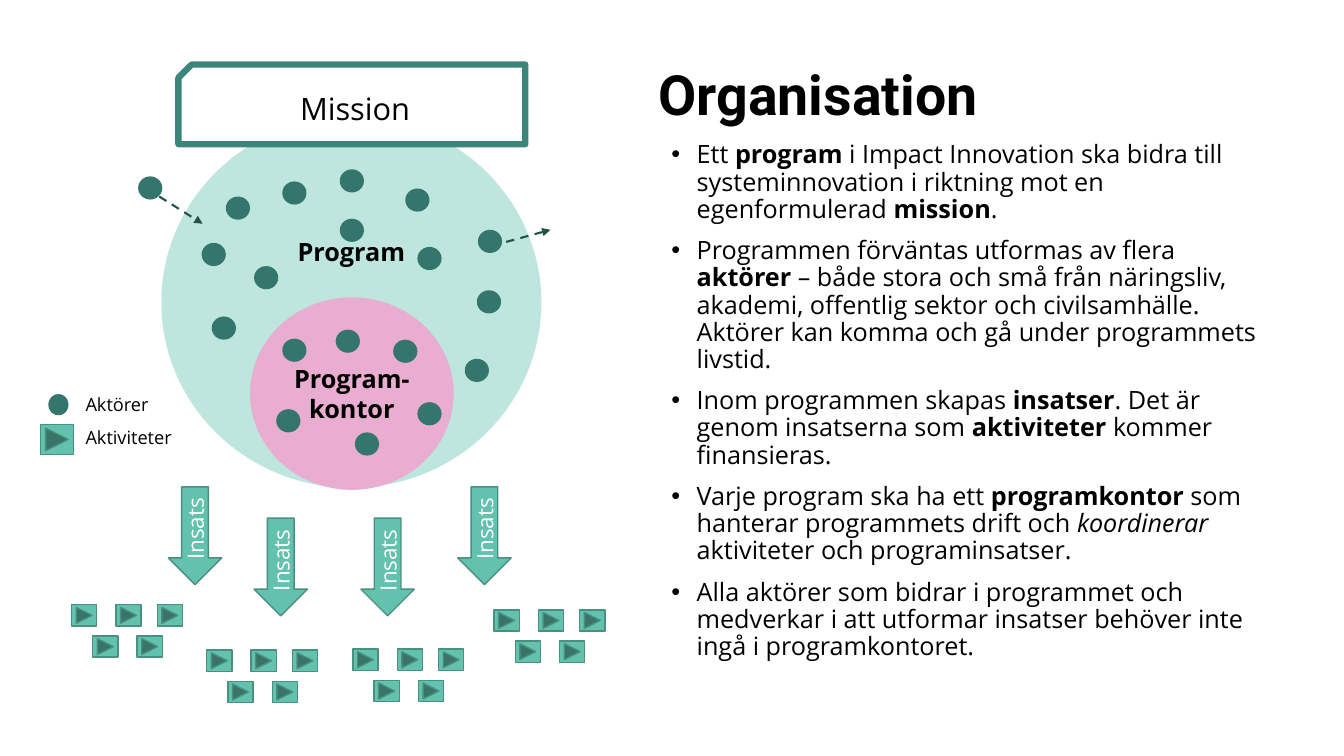
from lxml import etree
from pptx import Presentation
from pptx import util as u
from pptx.dml.color import RGBColor
from pptx.enum import dml, shapes, text
from pptx.oxml.ns import qn

TITLE = "Organisation"
# Each bullet is a list of (words, style) runs: "b" is bold, "i" is italic.
BULLETS = [
    [("Ett ", ""), ("program", "b"),
     (" i Impact Innovation ska bidra till systeminnovation i riktning mot en egenformulerad ", ""),
     ("mission", "b"), (".", "")],
    [("Programmen förväntas utformas av flera ", ""), ("aktörer", "b"),
     (" – både stora och små från näringsliv, akademi, offentlig sektor och civilsamhälle. "
      "Aktörer kan komma och gå under programmets livstid.", "")],
    [("Inom programmen skapas ", ""), ("insatser", "b"), (". Det är genom insatserna som ", ""),
     ("aktiviteter", "b"), (" kommer finansieras.", "")],
    [("Varje program ska ha ett ", ""), ("programkontor", "b"),
     (" som hanterar programmets drift och ", ""), ("koordinerar", "i"),
     (" aktiviteter och programinsatser.", "")],
    [("Alla aktörer som bidrar i programmet och medverkar i att utformar insatser "
      "behöver inte ingå i programkontoret.", "")],
]

BLACK = RGBColor(0x00, 0x00, 0x00)
WHITE = RGBColor(0xFF, 0xFF, 0xFF)
MINT = RGBColor(0xBE, 0xE6, 0xDE)
PINK = RGBColor(0xE8, 0xAD, 0xD0)
FRAME = RGBColor(0x3B, 0x85, 0x7A)
ACTOR = RGBColor(0x34, 0x75, 0x6C)
GREEN = RGBColor(0x62, 0xC2, 0xAE)
GREEN_EDGE = RGBColor(0x49, 0x90, 0x81)
ARROW = RGBColor(0x21, 0x54, 0x49)
BODY_FONT, TITLE_FONT = "Open Sans", "Roboto"

# Inches: left, top, width, height
TITLE_BOX = (6.43, 0.64, 6.42, 0.67)
BULLET_BOX = (6.56, 1.36, 6.19, 6.14)
PROGRAM = (1.6, 1.16, 3.77, 3.68)
OFFICE = (2.48, 2.95, 2.02, 1.91)
MISSION = (1.77, 0.64, 3.44, 0.79)
LEGEND_ACTOR = (0.48, 3.91, 0.2, 0.21)
LEGEND_ACTIVITY = (0.4, 4.21, 0.33, 0.3)
LEGEND_TEXTS = [("Aktörer", (0.75, 3.85, 0.83, 0.32)), ("Aktiviteter", (0.75, 4.18, 1.07, 0.32))]

ACTOR_SIZE = (0.24, 0.23)
ACTORS = [
    (2.24, 1.95), (2.8, 1.8), (3.37, 1.68), (3.52, 4.29), (2.1, 3.14), (3.37, 2.17),
    (4.02, 1.87), (4.14, 2.45), (4.74, 2.28), (4.73, 2.88), (3.9, 3.37), (4.61, 3.56),
    (2.8, 3.36), (3.33, 3.27), (4.14, 3.99), (2.74, 4.06), (2.52, 2.64), (2, 2.41),
    (1.37, 1.75),
]
MOVES = [((1.58, 1.95), (2.01, 2.22)), ((5.02, 2.4), (5.46, 2.28))]

EFFORT_SIZE = (0.53, 0.97)
EFFORTS = [(1.67, 4.83), (4.54, 4.83), (2.52, 5.14), (3.58, 5.14)]

ACTIVITY_SIZE = (0.25, 0.21)
ACTIVITY_CLUSTERS = [(0.71, 6), (4.9, 6.05), (2.05, 6.45), (3.5, 6.44)]
CLUSTER_OFFSETS = [(0.21, 0.31), (0.65, 0.31), (0, 0), (0.44, 0), (0.85, 0)]


def inches(values):
    return [u.Inches(value) for value in values]


def set_all(target, values):
    for name, value in values.items():
        setattr(target, name, value)


def place(holder, box):
    set_all(holder, dict(zip(("left", "top", "width", "height"), inches(box))))


def write(paragraph, words, size, color=BLACK, bold=False, italic=False, font=BODY_FONT):
    run = paragraph.add_run()
    run.text = words
    set_all(run.font, {"size": u.Pt(size), "name": font, "bold": bold, "italic": italic})
    run.font.color.rgb = color


def draw(parent, kind, box, fill, edge=None, edge_width=1):
    shape = parent.add_shape(kind, *inches(box))
    shape.shadow.inherit = False
    shape.fill.solid()
    shape.fill.fore_color.rgb = fill
    if edge is None:
        shape.line.fill.background()
    else:
        shape.line.color.rgb = edge
        shape.line.width = u.Pt(edge_width)
    return shape


def label(shape, words, size, **style):
    frame = shape.text_frame
    set_all(frame, {"word_wrap": True, "vertical_anchor": text.MSO_ANCHOR.MIDDLE})
    frame.paragraphs[0].alignment = text.PP_ALIGN.CENTER
    write(frame.paragraphs[0], words, size, **style)


def draw_activity(parent, box):
    draw(parent, shapes.MSO_SHAPE.ACTION_BUTTON_FORWARD_OR_NEXT, box, GREEN, GREEN_EDGE)


def draw_move(parent, start, end):
    """Dashed arrow for an actor that joins or leaves the programme."""
    move = parent.add_connector(shapes.MSO_CONNECTOR.STRAIGHT, *inches(start + end))
    move.line.color.rgb = ARROW
    set_all(move.line, {"width": u.Pt(1.5), "dash_style": dml.MSO_LINE.DASH})
    properties = move.element.spPr
    etree.SubElement(properties.find(qn("a:ln")), qn("a:tailEnd"), type="triangle")
    etree.SubElement(properties, qn("a:effectLst"))


def fill_title(title):
    place(title, TITLE_BOX)
    frame = title.text_frame
    set_all(frame, {"word_wrap": True, "auto_size": text.MSO_AUTO_SIZE.NONE,
                    "vertical_anchor": text.MSO_ANCHOR.BOTTOM})
    set_all(frame.paragraphs[0], {"alignment": text.PP_ALIGN.LEFT, "line_spacing": 0.9})
    write(frame.paragraphs[0], TITLE, 39.6, bold=True, font=TITLE_FONT)


def fill_bullets(body):
    place(body, BULLET_BOX)
    frame = body.text_frame
    set_all(frame, {"word_wrap": True, "auto_size": text.MSO_AUTO_SIZE.NONE})
    for number, runs in enumerate(BULLETS):
        paragraph = frame.add_paragraph() if number else frame.paragraphs[0]
        set_all(paragraph, {"line_spacing": 0.9, "space_before": u.Pt(10 if number else 0)})
        properties = paragraph._p.get_or_add_pPr()
        indent = u.Inches(0.25)
        properties.set("marL", str(indent))
        properties.set("indent", str(-indent))
        etree.SubElement(properties, qn("a:buFont"), typeface="Arial")
        etree.SubElement(properties, qn("a:buChar"), char="•")
        for words, style in runs:
            write(paragraph, words, 18, bold=style == "b", italic=style == "i")


def draw_programme(parent):
    oval = shapes.MSO_SHAPE.OVAL
    program = draw(parent, oval, PROGRAM, MINT)
    label(program, "Program", 18, bold=True)
    program.text_frame.margin_bottom = u.Inches(1.07)
    label(draw(parent, oval, OFFICE, PINK), "Program-kontor", 18, bold=True)
    mission = draw(parent, shapes.MSO_SHAPE.SNIP_1_RECTANGLE, MISSION, WHITE, FRAME, 4.5)
    mission.element.spPr.find(qn("a:xfrm")).set("flipH", "1")
    label(mission, "Mission", 22)
    for corner in ACTORS:
        draw(parent, oval, corner + ACTOR_SIZE, ACTOR)
    for start, end in MOVES:
        draw_move(parent, start, end)


def draw_efforts(parent):
    for corner in EFFORTS:
        effort = draw(parent, shapes.MSO_SHAPE.DOWN_ARROW, corner + EFFORT_SIZE, GREEN, GREEN_EDGE)
        label(effort, "Insats", 16, color=WHITE)
        effort.text_frame._txBody.bodyPr.set("vert", "vert270")
    for left, top in ACTIVITY_CLUSTERS:
        cluster = parent.add_group_shape().shapes
        for across, down in CLUSTER_OFFSETS:
            draw_activity(cluster, (left + across, top + down) + ACTIVITY_SIZE)


def draw_legend(parent):
    draw(parent, shapes.MSO_SHAPE.OVAL, LEGEND_ACTOR, ACTOR)
    draw_activity(parent, LEGEND_ACTIVITY)
    for words, box in LEGEND_TEXTS:
        frame = parent.add_textbox(*inches(box)).text_frame
        set_all(frame, {"word_wrap": False, "auto_size": text.MSO_AUTO_SIZE.SHAPE_TO_FIT_TEXT})
        write(frame.paragraphs[0], words, 13)


def main():
    deck = Presentation()
    set_all(deck, {"slide_width": u.Inches(13.33), "slide_height": u.Inches(7.5)})
    slide = deck.slides.add_slide(deck.slide_layouts[1])
    fill_title(slide.shapes.title)
    fill_bullets(slide.placeholders[1])
    draw_programme(slide.shapes)
    draw_efforts(slide.shapes)
    draw_legend(slide.shapes)
    deck.save("out.pptx")


if __name__ == "__main__":
    main()
